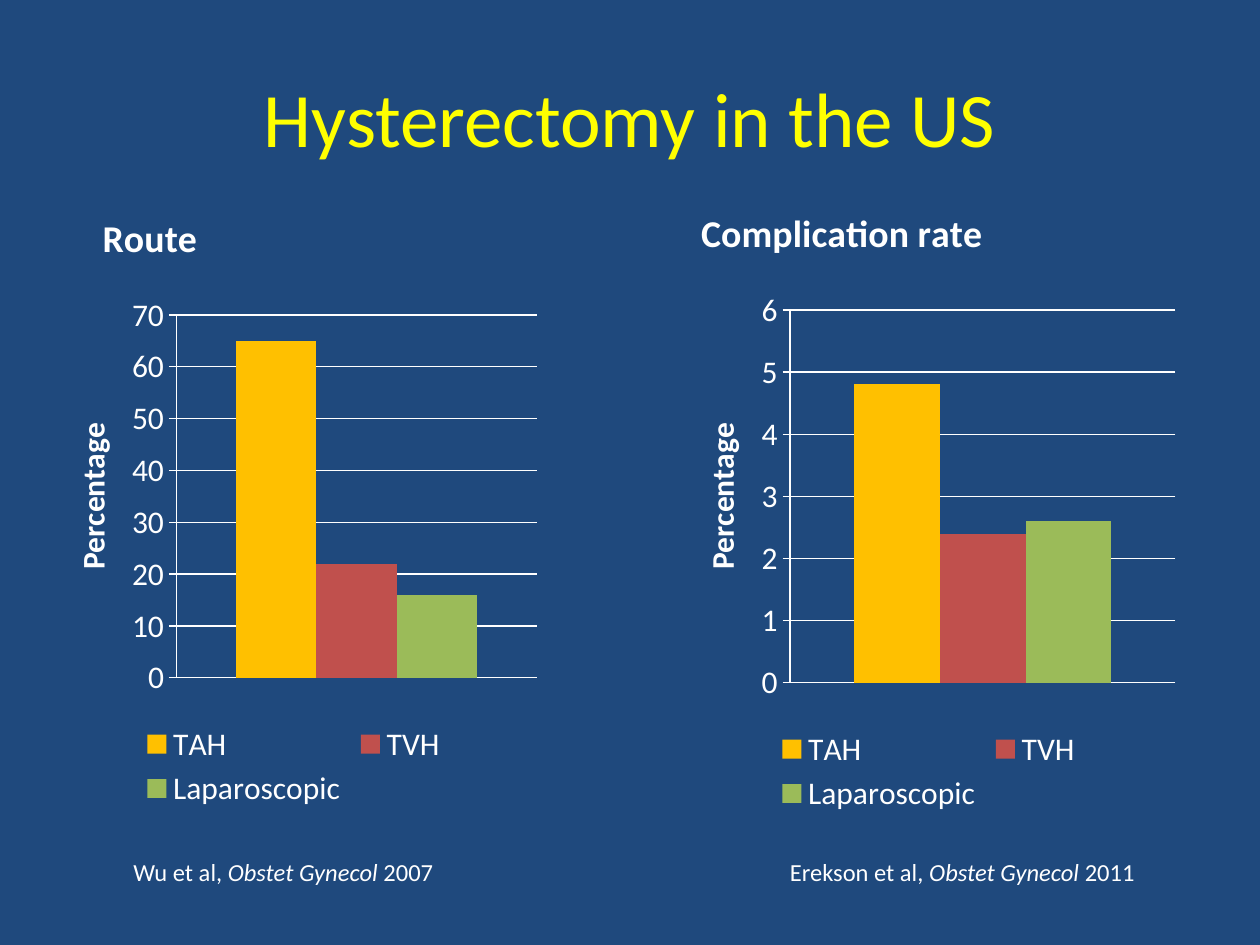
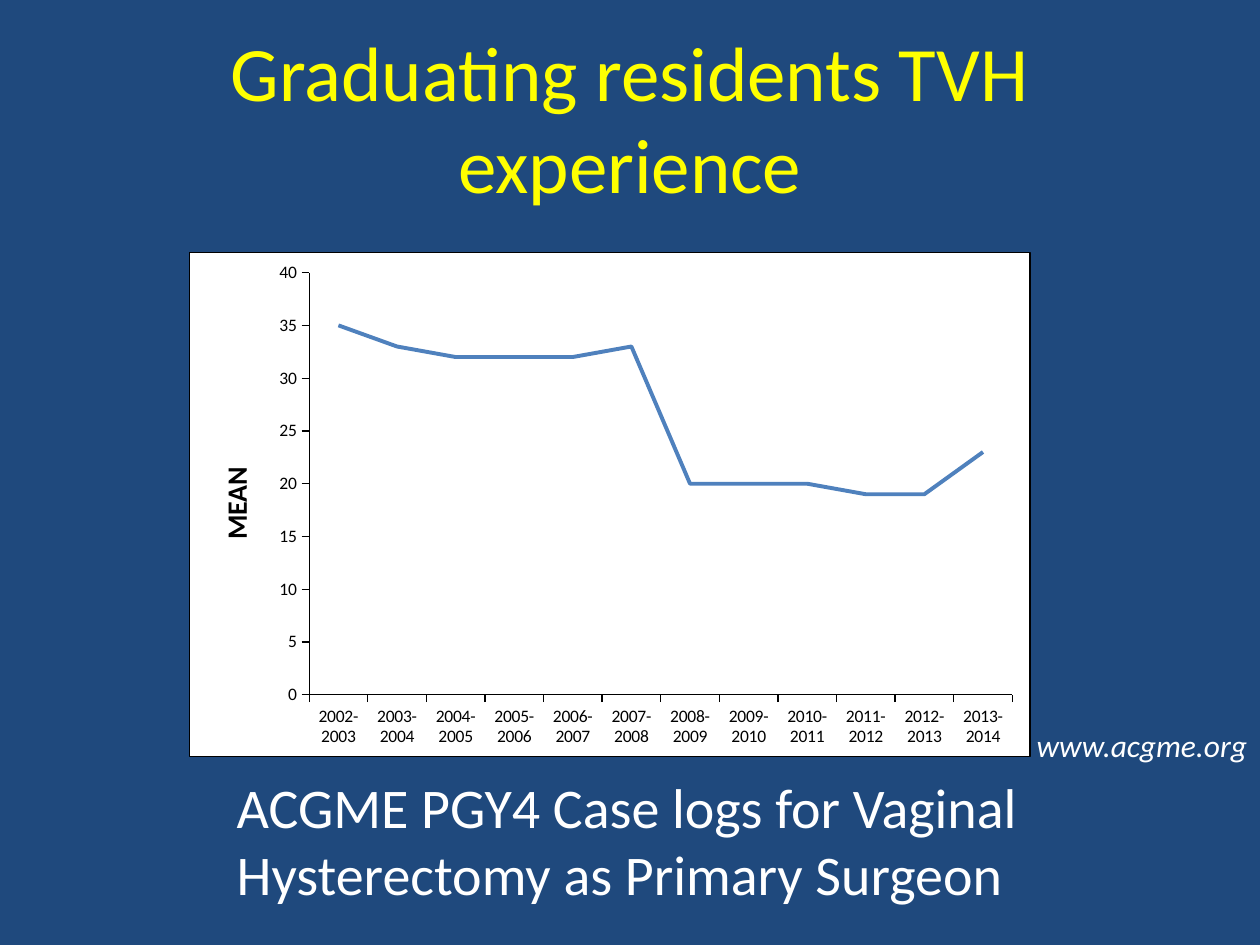
from lxml import etree
from pptx import Presentation
from pptx.chart.data import CategoryChartData
from pptx.dml.color import RGBColor
from pptx.enum.chart import XL_CHART_TYPE, XL_LEGEND_POSITION, XL_TICK_MARK
from pptx.enum.text import MSO_ANCHOR, PP_ALIGN
from pptx.oxml import parse_xml
from pptx.oxml.ns import nsdecls, qn
from pptx.util import Inches, Pt

COLUMNS = XL_CHART_TYPE.COLUMN_CLUSTERED
LINE = XL_CHART_TYPE.LINE
LEGEND_BOTTOM = XL_LEGEND_POSITION.BOTTOM
TICK_OUT, TICK_NONE = XL_TICK_MARK.OUTSIDE, XL_TICK_MARK.NONE
MIDDLE, CENTER = MSO_ANCHOR.MIDDLE, PP_ALIGN.CENTER

# Shared style
FONT = "Calibri"
NAVY, YELLOW, WHITE, BLACK = "1F497D", "FFFF00", "FFFFFF", "000000"
BLUE = "4F81BD"
ROUTE_COLORS = {"TAH": "FFC000", "TVH": "C0504D", "Laparoscopic": "9BBB59"}


def color(hex_value):
    return RGBColor.from_string(hex_value)


def style_font(font, size, hex_color, bold=None, italic=None):
    font.name = FONT
    font.size = Pt(size)
    font.color.rgb = color(hex_color)
    font.bold = bold
    font.italic = italic


def style_line(line, hex_color, width=0.75):
    line.color.rgb = color(hex_color)
    line.width = Pt(width)


# Slides and text
def add_slide(deck, title_text):
    page = deck.slides.add_slide(deck.slide_layouts[5])
    title = page.shapes.title
    title.left, title.top = Inches(0.5), Inches(0.3)
    title.width, title.height = Inches(9), Inches(1.25)
    frame = title.text_frame
    frame.text = title_text
    frame.vertical_anchor = MIDDLE
    frame.paragraphs[0].alignment = CENTER
    style_font(frame.paragraphs[0].runs[0].font, 44, YELLOW)
    return page


def add_text(page, place, size, spans, wrap=False):
    """Each span is a pair of text and italic flag."""
    box = page.shapes.add_textbox(*map(Inches, place))
    box.text_frame.word_wrap = wrap
    para = box.text_frame.paragraphs[0]
    for text, italic in spans:
        span = para.add_run()
        span.text = text
        style_font(span.font, size, WHITE, italic=italic)


def add_citation(page, place, authors, year):
    add_text(page, place, 14, [(authors + " et al, ", False),
                               ("Obstet Gynecol ", True), (year, False)])


# Chart parts
def set_layout(element, index, chart_place, part):
    """Place a chart part, given in inches from the chart's corner."""
    for old in element.findall(qn("c:layout")):
        element.remove(old)
    layout = parse_xml(f"<c:layout {nsdecls('c')}><c:manualLayout/></c:layout>")
    manual = layout[0]
    if len(part) == 4:
        etree.SubElement(manual, qn("c:layoutTarget")).set("val", "inner")
    for side in ("x", "y"):
        etree.SubElement(manual, qn(f"c:{side}Mode")).set("val", "edge")
    for name, length, whole in zip("xywh", part, chart_place[2:] * 2):
        fraction = round(length / whole, 4)
        etree.SubElement(manual, qn(f"c:{name}")).set("val", str(fraction))
    element.insert(index, layout)


def area_format(fill=None, border=None):
    def paint(hex_color):
        if hex_color is None:
            return "<a:noFill/>"
        return f'<a:solidFill><a:srgbClr val="{hex_color}"/></a:solidFill>'
    return parse_xml(f'<c:spPr {nsdecls("c", "a")}>{paint(fill)}'
                     f'<a:ln w="{Pt(0.75)}">{paint(border)}</a:ln></c:spPr>')


def set_chart_title(title, text, size, hex_color):
    title.text_frame.text = text
    style_font(title.text_frame.paragraphs[0].runs[0].font, size, hex_color,
               bold=True)


def add_chart(page, kind, place, categories, series, plot, text_size,
              fill=None, border=None):
    data = CategoryChartData()
    data.categories = categories
    for name, values in series.items():
        data.add_series(name, values)
    chart = page.shapes.add_chart(kind, *map(Inches, place), data).chart
    chart.has_title = False
    chart.has_legend = False
    style_font(chart.font, text_size, WHITE)
    chart.element.find(qn("c:txPr")).addprevious(area_format(fill, border))
    plot_area = chart.element.xpath(".//c:plotArea")[0]
    set_layout(plot_area, 0, place, plot)
    plot_area.append(area_format())
    chart.plots[0].vary_by_categories = False
    return chart


def set_value_axis(chart, title, size, hex_color, maximum, unit):
    axis = chart.value_axis
    axis.minimum_scale, axis.maximum_scale = 0, maximum
    axis.major_unit = unit
    axis.major_tick_mark, axis.minor_tick_mark = TICK_OUT, TICK_NONE
    style_line(axis.format.line, hex_color)
    set_chart_title(axis.axis_title, title, size, hex_color)
    body = axis.axis_title.element.xpath(".//a:bodyPr")[0]
    body.set("rot", "-5400000")
    body.set("vert", "horz")
    return axis


def add_route_chart(page, place, title, title_at, plot, values, maximum, unit):
    series = {name: [value] for name, value in zip(ROUTE_COLORS, values)}
    chart = add_chart(page, COLUMNS, place, ["1"], series, plot, 18)
    chart.has_title = True
    set_chart_title(chart.chart_title, title, 21.6, WHITE)
    set_layout(chart.chart_title.element, 1, place, title_at)
    chart.has_legend = True
    chart.legend.position = LEGEND_BOTTOM
    chart.legend.include_in_layout = False
    chart.category_axis.visible = False
    axis = set_value_axis(chart, "Percentage", 18, WHITE, maximum, unit)
    axis.has_major_gridlines = True
    style_line(axis.major_gridlines.format.line, WHITE)
    chart.plots[0].gap_width = 150
    for bar, hex_color in zip(chart.plots[0].series, ROUTE_COLORS.values()):
        bar.format.fill.solid()
        bar.format.fill.fore_color.rgb = color(hex_color)


def add_case_chart(page, place):
    years = [f"{year}-{year + 1}" for year in range(2002, 2014)]
    means = [35, 33, 32, 32, 32, 33, 20, 20, 20, 19, 19, 23]
    chart = add_chart(page, LINE, place, years, {"Series 1": means},
                      (0.95, 0.16, 5.59, 3.36), 10, fill=WHITE, border=BLACK)
    axis = set_value_axis(chart, "MEAN", 16, BLACK, 40, 5)
    axis.has_major_gridlines = False
    set_layout(axis.axis_title.element, 1, place, (0.18, 1.67))
    year_axis = chart.category_axis
    year_axis.major_tick_mark = TICK_OUT
    style_line(year_axis.format.line, BLACK)
    for labels in (axis.tick_labels, year_axis.tick_labels):
        style_font(labels.font, 10, BLACK)
    curve = chart.plots[0].series[0]
    curve.smooth = False
    style_line(curve.format.line, BLUE, 2.25)


def main():
    deck = Presentation()
    deck.slide_width, deck.slide_height = Inches(10), Inches(7.5)
    background = deck.slide_master.background.fill
    background.solid()
    background.fore_color.rgb = color(NAVY)

    # Routes and their complications
    page = add_slide(deck, "Hysterectomy in the US")
    add_route_chart(page, (0.33, 1.54, 4, 4.92), "Route", (0.43, 0.08),
                    (1.07, 0.96, 2.86, 2.88), (65, 22, 16), 70, 10)
    add_route_chart(page, (5.33, 1.5, 4.08, 5), "Complication rate",
                    (0.18, 0.08), (0.94, 0.96, 3.06, 2.96),
                    (4.8, 2.4, 2.6), 6, 1)
    add_citation(page, (0.96, 6.75, 2.62, 0.34), "Wu", "2007")
    add_citation(page, (6.17, 6.75, 2.98, 0.34), "Erekson", "2011")

    # Resident case logs
    page = add_slide(deck, "Graduating residents TVH experience")
    add_case_chart(page, (1.5, 2, 6.68, 4.01))
    add_text(page, (1.78, 6.08, 7.3, 1.18), 32,
             [("ACGME PGY4 Case logs for Vaginal Hysterectomy as Primary "
               "Surgeon", False)], wrap=True)
    add_text(page, (8.13, 5.71, 1.9, 0.4), 18, [("www.acgme.org", True)])

    deck.save("out.pptx")


if __name__ == "__main__":
    main()
